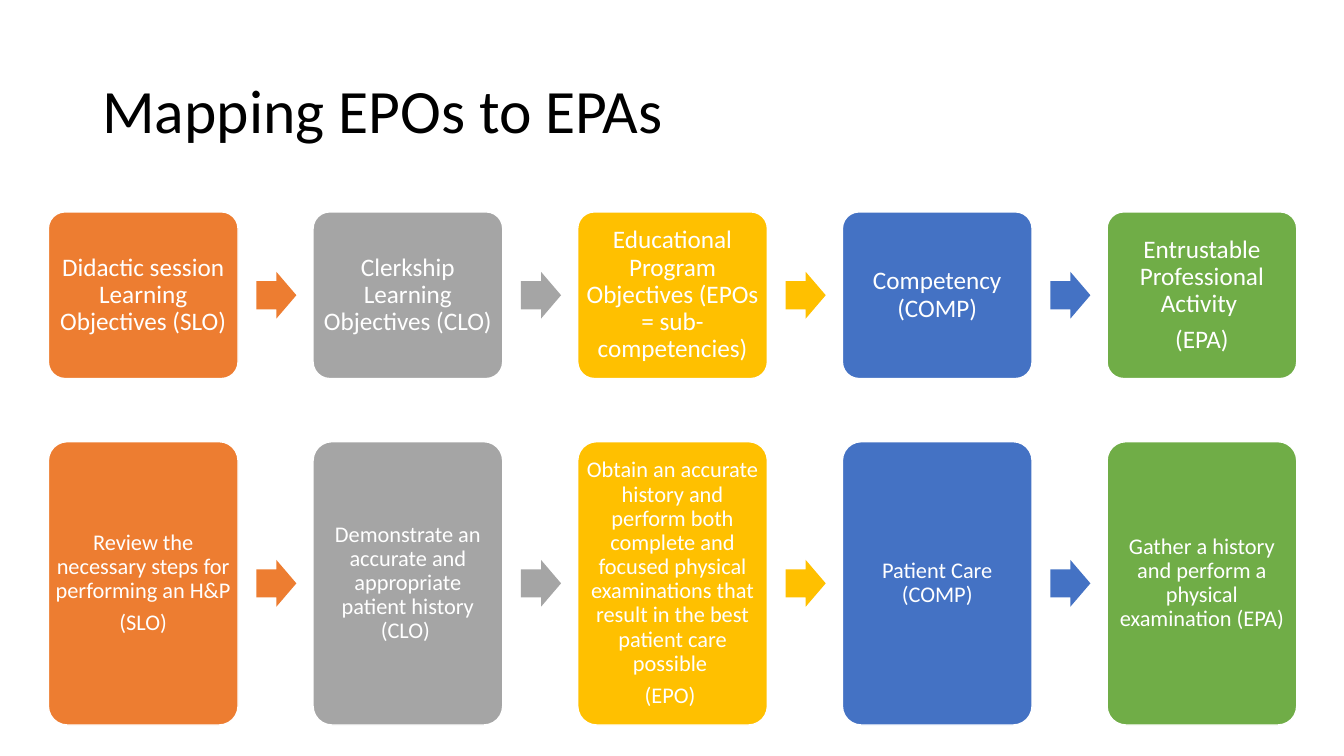
from pptx import Presentation
from pptx import util as u
from pptx.dml.color import RGBColor
from pptx.enum import shapes, text

BLACK = RGBColor(0x00, 0x00, 0x00)
WHITE = RGBColor(0xFF, 0xFF, 0xFF)
ORANGE = RGBColor(0xED, 0x7D, 0x31)
GRAY = RGBColor(0xA5, 0xA5, 0xA5)
GOLD = RGBColor(0xFF, 0xC0, 0x00)
BLUE = RGBColor(0x44, 0x72, 0xC4)
GREEN = RGBColor(0x70, 0xAD, 0x47)
STEP_COLORS = [ORANGE, GRAY, GOLD, BLUE, GREEN]

# Column grid and arrow size, in centimetres
LEFT, PITCH, BOX_WIDTH = 1.22, 6.67, 4.78
ARROW_OFFSET, ARROW_WIDTH, ARROW_HEIGHT = 5.24, 1.01, 1.18
CORNER = 0.1
TEXT_MARGIN = 0.18

# Each box is a list of paragraphs
LEVELS = [
    ["Didactic session Learning Objectives (SLO)"],
    ["Clerkship Learning Objectives (CLO)"],
    ["Educational Program Objectives (EPOs = sub-competencies)"],
    ["Competency (COMP)"],
    ["Entrustable Professional Activity ", "(EPA)"],
]
EXAMPLES = [
    ["Review the necessary steps for performing an H&P ", "(SLO)"],
    ["Demonstrate an accurate and appropriate patient history (CLO) "],
    ["Obtain an accurate history and perform both complete and focused "
     "physical examinations that result in the best patient care possible ",
     "(EPO) "],
    ["Patient Care (COMP)"],
    ["Gather a history and perform a physical examination (EPA)"],
]


def set_all(target, values):
    for name, value in values.items():
        setattr(target, name, value)


def write(frame, paragraphs, font, layout):
    for index, content in enumerate(paragraphs):
        paragraph = frame.add_paragraph() if index else frame.paragraphs[0]
        set_all(paragraph, {"line_spacing": 0.9, **layout})
        run = paragraph.add_run()
        run.text = content
        set_all(run.font, {"name": "Calibri", "size": u.Pt(font["size"])})
        run.font.color.rgb = font["color"]


def add_title(slide, content):
    box = slide.shapes.add_textbox(u.Cm(2.33), u.Cm(1.01), u.Cm(29.21), u.Cm(3.68))
    set_all(box.text_frame, {"word_wrap": True,
                             "vertical_anchor": text.MSO_ANCHOR.MIDDLE})
    write(box.text_frame, [content], {"size": 44, "color": BLACK}, {})


def add_filled(slide, kind, bounds, color, adjustments):
    shape = slide.shapes.add_shape(kind, *[u.Cm(length) for length in bounds])
    shape.shadow.inherit = False
    shape.fill.solid()
    shape.fill.fore_color.rgb = color
    shape.line.fill.background()
    for index, value in enumerate(adjustments):
        shape.adjustments[index] = value
    return shape


def add_box(slide, bounds, color, paragraphs, size):
    box = add_filled(slide, shapes.MSO_SHAPE.ROUNDED_RECTANGLE, bounds, color, [CORNER])
    box.line.color.rgb = WHITE
    box.line.width = u.Pt(1)
    # The rounded corners already inset the text by 0.29 of their radius
    margin = u.Cm(TEXT_MARGIN - 0.29 * CORNER * min(bounds[2:]))
    sides = ("left", "top", "right", "bottom")
    set_all(box.text_frame, {
        "word_wrap": True,
        "vertical_anchor": text.MSO_ANCHOR.MIDDLE,
        **{f"margin_{side}": margin for side in sides},
    })
    write(box.text_frame, paragraphs, {"size": size, "color": WHITE},
          {"alignment": text.PP_ALIGN.CENTER, "space_after": u.Pt(0.35 * size)})


def add_process(slide, top, height, steps, size):
    arrow_top = top + (height - ARROW_HEIGHT) / 2
    for index, (paragraphs, color) in enumerate(zip(steps, STEP_COLORS)):
        left = LEFT + index * PITCH
        add_box(slide, (left, top, BOX_WIDTH, height), color, paragraphs, size)
        if index < len(steps) - 1:
            add_filled(slide, shapes.MSO_SHAPE.RIGHT_ARROW,
                       (left + ARROW_OFFSET, arrow_top, ARROW_WIDTH, ARROW_HEIGHT),
                       color, [0.6, 0.5])


def main():
    presentation = Presentation()
    set_all(presentation, {"slide_width": u.Cm(33.87), "slide_height": u.Cm(19.05)})
    slide = presentation.slides.add_slide(presentation.slide_layouts[6])

    # Heading
    add_title(slide, "Mapping EPOs to EPAs")
    # Levels of objectives, then a worked example of each
    add_process(slide, 5.34, 4.2, LEVELS, 18)
    add_process(slide, 11.13, 7.14, EXAMPLES, 16)

    presentation.save("out.pptx")


if __name__ == "__main__":
    main()
